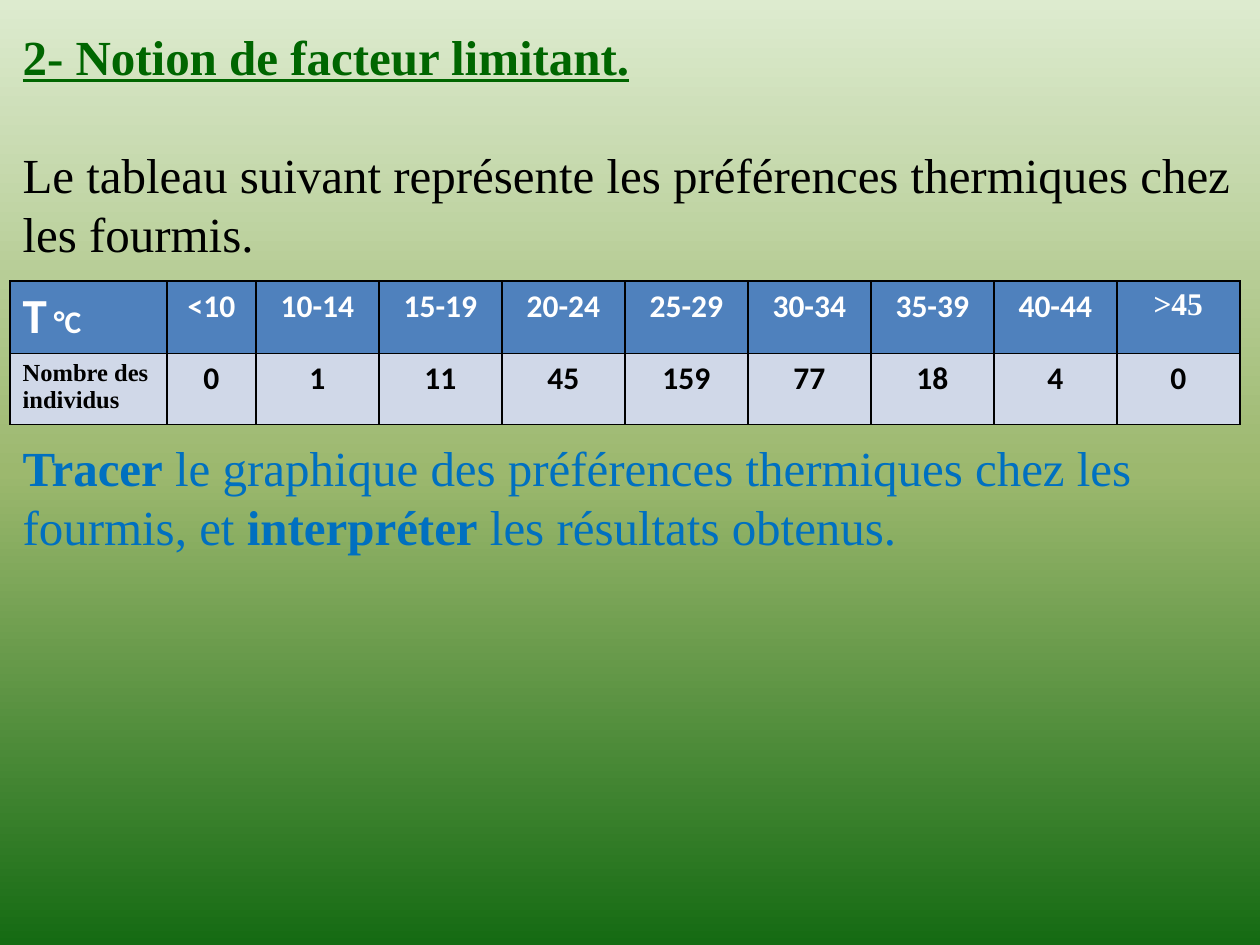
import copy

import pptx
import pptx.dml.color
import pptx.enum.text
import pptx.oxml
import pptx.oxml.ns
import pptx.util

EMU_PER_PX = 914400 / 126
SERIF, SANS = "Times New Roman", "Calibri"
COLORS = {
    "heading": "006600",
    "text": "000000",
    "task": "0070C0",
    "header_text": "FFFFFF",
    "header_fill": "4F81BD",
    "row_fill": "D0D8E8",
    "border": "000000",
}
GRADIENT = [(0, "DDEBCF"), (0.5, "9CB86E"), (1, "156B13")]

TEMPERATURES = ["<10", "10-14", "15-19", "20-24", "25-29",
                "30-34", "35-39", "40-44", "˃45"]
COUNTS = [0, 1, 11, 45, 159, 77, 18, 4, 0]
COL_WIDTHS = [157, 89] + [123] * 8
ROW_HEIGHT = 71


def px(n):
    return pptx.util.Emu(round(n * EMU_PER_PX))


def rgb(name):
    return pptx.dml.color.RGBColor.from_string(COLORS[name])


def add_run(p, text, color, size=28, font=SERIF, bold=False, underline=False):
    r = p.add_run()
    r.text = text
    f = r.font
    f.name, f.size = font, pptx.util.Pt(size)
    f.bold, f.underline = bold, underline
    f.color.rgb = rgb(color)


def set_background(s):
    fill = s.background.fill
    fill.gradient()
    fill.gradient_angle = 270
    stops = s.element.find(".//" + pptx.oxml.ns.qn("a:gsLst"))
    stops.append(copy.deepcopy(stops[0]))
    for stop, (position, color) in zip(fill.gradient_stops, GRADIENT):
        stop.position = position
        stop.color.rgb = pptx.dml.color.RGBColor.from_string(color)


def place(sp, left, top, width, height):
    """Position a placeholder and return its top-anchored text frame."""
    sp.left, sp.top, sp.width, sp.height = map(px, (left, top, width, height))
    tf = sp.text_frame
    tf.word_wrap = True
    tf.auto_size = pptx.enum.text.MSO_AUTO_SIZE.NONE
    tf.vertical_anchor = pptx.enum.text.MSO_ANCHOR.TOP
    return tf


def format_paragraph(p, space_before=0):
    """Plain left-aligned paragraph without bullet or indent."""
    p.alignment = pptx.enum.text.PP_ALIGN.LEFT
    p.space_before = pptx.util.Pt(space_before)
    pPr = p._p.get_or_add_pPr()
    pPr.set("marL", "0")
    pPr.set("indent", "0")
    pptx.oxml.ns.qn("a:buNone")
    pPr.append(pptx.oxml.parse_xml(
        f'<a:buNone {pptx.oxml.ns.nsdecls("a")}/>'))


def add_heading(s):
    p = place(s.shapes.title, 10, 20, 1250, 80).paragraphs[0]
    format_paragraph(p)
    add_run(p, "2- Notion de facteur limitant.", "heading",
            bold=True, underline=True)


def add_body(s):
    tf = place(s.placeholders[1], 10, 138, 1250, 608)
    p = tf.paragraphs[0]
    format_paragraph(p)
    add_run(p, "Le tableau suivant représente les préférences thermiques "
               "chez les fourmis.", "text")

    # The space before the task leaves room for the table
    p = tf.add_paragraph()
    format_paragraph(p, space_before=100.5)
    for text, bold in [
        ("Tracer", True),
        (" le graphique des préférences thermiques chez les fourmis, et ",
         False),
        ("interpréter", True),
        (" les résultats obtenus.", False),
    ]:
        add_run(p, text, "task", bold=bold)


def style_cell(cell, fill):
    tcPr = cell._tc.get_or_add_tcPr()
    for side in ("lnL", "lnR", "lnT", "lnB"):
        tcPr.append(pptx.oxml.parse_xml(
            f'<a:{side} {pptx.oxml.ns.nsdecls("a")} w="12700"><a:solidFill>'
            f'<a:srgbClr val="{COLORS["border"]}"/></a:solidFill></a:{side}>'))
    cell.fill.solid()
    cell.fill.fore_color.rgb = rgb(fill)


def fill_row(table, row, label, values, color, fill):
    """label is a list of (text, size, font) runs for the first cell."""
    table.rows[row].height = px(ROW_HEIGHT)
    for col in range(len(COL_WIDTHS)):
        cell = table.cell(row, col)
        style_cell(cell, fill)
        p = cell.text_frame.paragraphs[0]
        if col == 0:
            runs = label
        else:
            value = str(values[col - 1])
            runs = [(value, 18, SERIF if value == "˃45" else SANS)]
            p.alignment = pptx.enum.text.PP_ALIGN.CENTER
        for text, size, font in runs:
            add_run(p, text, color, size, font, bold=True)


def add_data_table(s):
    table = s.shapes.add_table(
        2, len(COL_WIDTHS), px(10), px(281),
        px(sum(COL_WIDTHS)), px(2 * ROW_HEIGHT)).table
    for column, width in zip(table.columns, COL_WIDTHS):
        column.width = px(width)
    fill_row(table, 0, [("T", 28, SANS), (" °C", 18, SANS)], TEMPERATURES,
             "header_text", "header_fill")
    fill_row(table, 1, [("Nombre des individus", 14, SERIF)], COUNTS,
             "text", "row_fill")


def main():
    prs = pptx.Presentation()
    prs.slide_width, prs.slide_height = px(1260), px(945)
    s = prs.slides.add_slide(prs.slide_layouts[1])
    set_background(s)
    add_heading(s)
    add_body(s)
    add_data_table(s)
    prs.save("out.pptx")


if __name__ == "__main__":
    main()
